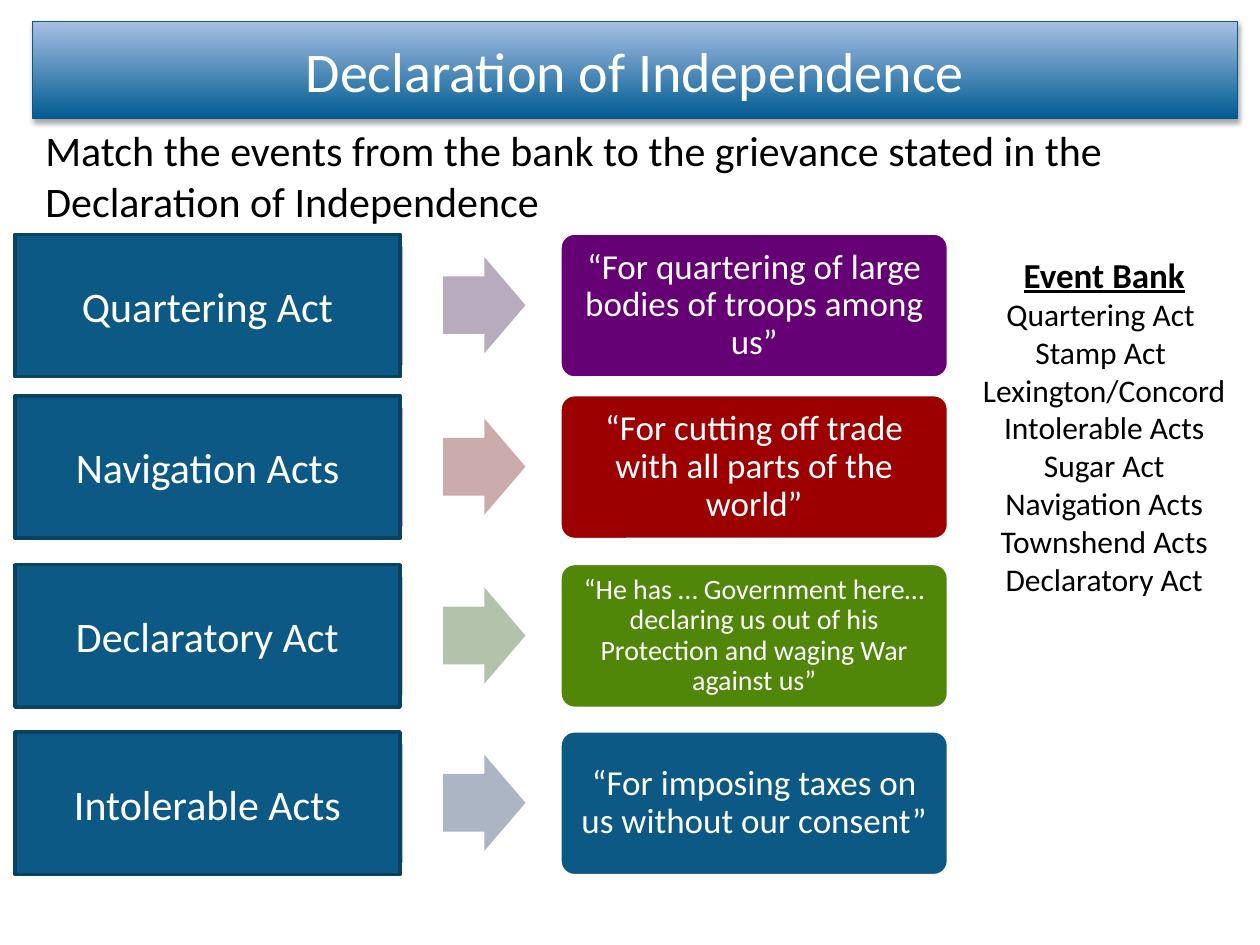
"""Build the Declaration of Independence matching slide."""
from dataclasses import dataclass
from typing import Optional

from lxml import etree
from pptx import Presentation
from pptx.dml.color import RGBColor
from pptx.enum import shapes, text
from pptx.oxml import ns
from pptx.util import Pt

FONT = "Calibri"
WHITE = RGBColor(0xFF, 0xFF, 0xFF)
BLACK = RGBColor(0, 0, 0)
BLUE = RGBColor(0x0C, 0x59, 0x86)
NAVY = RGBColor(0x09, 0x42, 0x63)
EDGE = RGBColor(0x09, 0x58, 0x86)
DEEP = RGBColor(0x00, 0x5C, 0x92)
PALE = RGBColor(0xA7, 0xBF, 0xE4)
PURPLE = RGBColor(0x66, 0x00, 0x75)
LILAC = RGBColor(0xB8, 0xAB, 0xBD)
RED = RGBColor(0x9C, 0x00, 0x01)
ROSE = RGBColor(0xCB, 0xAB, 0xAB)
GREEN = RGBColor(0x50, 0x87, 0x09)
SAGE = RGBColor(0xB3, 0xC3, 0xAB)
STEEL = RGBColor(0xAB, 0xB5, 0xC3)
KIND = shapes.MSO_SHAPE
MID = text.MSO_ANCHOR.MIDDLE
MIDDLE = text.PP_ALIGN.CENTER
LEFT = text.PP_ALIGN.LEFT
CARD_W, CARD_H = 222, 82.8
EVENTS = ["Quartering Act ", "Stamp Act ", "Lexington/Concord", "Intolerable Acts",
          "Sugar Act", "Navigation Acts", "Townshend Acts", "Declaratory Act"]


@dataclass
class Match:
    top: float
    event: str
    quote: str
    fill: RGBColor
    tint: RGBColor
    size: float = 20


MATCHES = [
    Match(133.2, "Quartering Act",
          "“For quartering of large bodies of troops among us”", PURPLE, LILAC),
    Match(225.5, "Navigation Acts",
          "“For cutting off trade with all parts of the world”", RED, ROSE),
    Match(322, "Declaratory Act",
          "“He has … Government here… declaring us out of his Protection "
          "and waging War against us”", GREEN, SAGE, 16),
    Match(417.6, "Intolerable Acts",
          "“For imposing taxes on us without our consent”", BLUE, STEEL),
]


def place(item, left: float, top: float, width: float, height: float) -> None:
    item.left, item.top = Pt(left), Pt(top)
    item.width, item.height = Pt(width), Pt(height)


def write(para, words: str, size: float, color: RGBColor, align=MIDDLE):
    para.alignment = align
    run = para.add_run()
    run.text = words
    run.font.name, run.font.size = FONT, Pt(size)
    run.font.color.rgb = color
    return run


def plain(para) -> None:
    para.space_before = Pt(0)
    props = para._p.get_or_add_pPr()
    props.set("marL", "0")
    props.set("indent", "0")
    etree.SubElement(props, ns.qn("a:buNone"))


def block(slide, kind, left: float, top: float, width: float, height: float,
          fill: RGBColor, line: Optional[RGBColor] = None):
    item = slide.shapes.add_shape(kind, Pt(left), Pt(top), Pt(width), Pt(height))
    item.shadow.inherit = False
    item.fill.solid()
    item.fill.fore_color.rgb = fill
    if line is None:
        item.line.fill.background()
    else:
        item.line.color.rgb = line
        item.line.width = Pt(2)
    item.text_frame.word_wrap = True
    item.text_frame.vertical_anchor = MID
    return item


def card(slide, left: float, top: float, fill: RGBColor):
    item = block(slide, KIND.ROUNDED_RECTANGLE, left, top, CARD_W, CARD_H, fill, WHITE)
    item.adjustments[0] = 0.1
    return item


def draw_match(slide, match: Match) -> None:
    card(slide, 9, match.top, match.fill)
    arrow = block(slide, KIND.RIGHT_ARROW, 253.3, match.top + 13.7, 47, 55, match.tint)
    arrow.adjustments[0] = 0.6
    frame = card(slide, 320, match.top, match.fill).text_frame
    frame.margin_left = frame.margin_right = Pt(6)
    frame.margin_top = frame.margin_bottom = Pt(6)
    para = frame.paragraphs[0]
    para.line_spacing = 0.9
    write(para, match.quote, match.size, WHITE)


def draw_answer(slide, match: Match) -> None:
    item = block(slide, KIND.RECTANGLE, 8.6, match.top + 0.7, 220, 81.4, BLUE, NAVY)
    write(item.text_frame.paragraphs[0], match.event, 24, WHITE)


def draw_title(item) -> None:
    place(item, 18.7, 12.2, 688.5, 55.5)
    props = item._element.spPr
    shape = etree.Element(ns.qn("a:prstGeom"), prst="roundRect")
    etree.SubElement(shape, ns.qn("a:avLst"))
    props.insert(1, shape)
    item.fill.gradient()
    item.fill.gradient_angle = 90
    for stop, color in zip(item.fill.gradient_stops, (DEEP, PALE)):
        stop.color.rgb = color
    item.line.color.rgb = EDGE
    item.line.width = Pt(0.75)
    effects = etree.SubElement(props, ns.qn("a:effectLst"))
    shadow = etree.SubElement(effects, ns.qn("a:outerShdw"), blurRad=str(Pt(3.1)),
                              dist=str(Pt(1.8)), dir="5400000", rotWithShape="0")
    black = etree.SubElement(shadow, ns.qn("a:srgbClr"), val="000000")
    etree.SubElement(black, ns.qn("a:alpha"), val="35000")
    frame = item.text_frame
    frame.vertical_anchor = MID
    frame.auto_size = text.MSO_AUTO_SIZE.NONE
    write(frame.paragraphs[0], "Declaration of Independence", 32, WHITE)


def draw_task(item) -> None:
    place(item, 18.7, 67.7, 688.5, 65.5)
    item.text_frame.auto_size = text.MSO_AUTO_SIZE.NONE
    para = item.text_frame.paragraphs[0]
    plain(para)
    write(para, "Match the events from the bank to the grievance stated in the "
          "Declaration of Independence", 24, BLACK, LEFT)


def draw_bank(item) -> None:
    place(item, 542, 141, 178, 227.5)
    frame = item.text_frame
    frame.auto_size = text.MSO_AUTO_SIZE.NONE
    head = frame.paragraphs[0]
    plain(head)
    run = write(head, "Event Bank", 20, BLACK)
    run.font.bold = run.font.underline = True
    for event in EVENTS:
        para = frame.add_paragraph()
        plain(para)
        write(para, event, 18, BLACK)


def main() -> None:
    deck = Presentation()
    deck.slide_width, deck.slide_height = Pt(720), Pt(540)
    slide = deck.slides.add_slide(deck.slide_layouts[3])
    title, task, bank = slide.placeholders
    draw_title(title)
    draw_task(task)
    draw_bank(bank)
    for match in MATCHES:
        draw_match(slide, match)
    for match in MATCHES:
        draw_answer(slide, match)
    deck.save("out.pptx")


if __name__ == "__main__":
    main()
